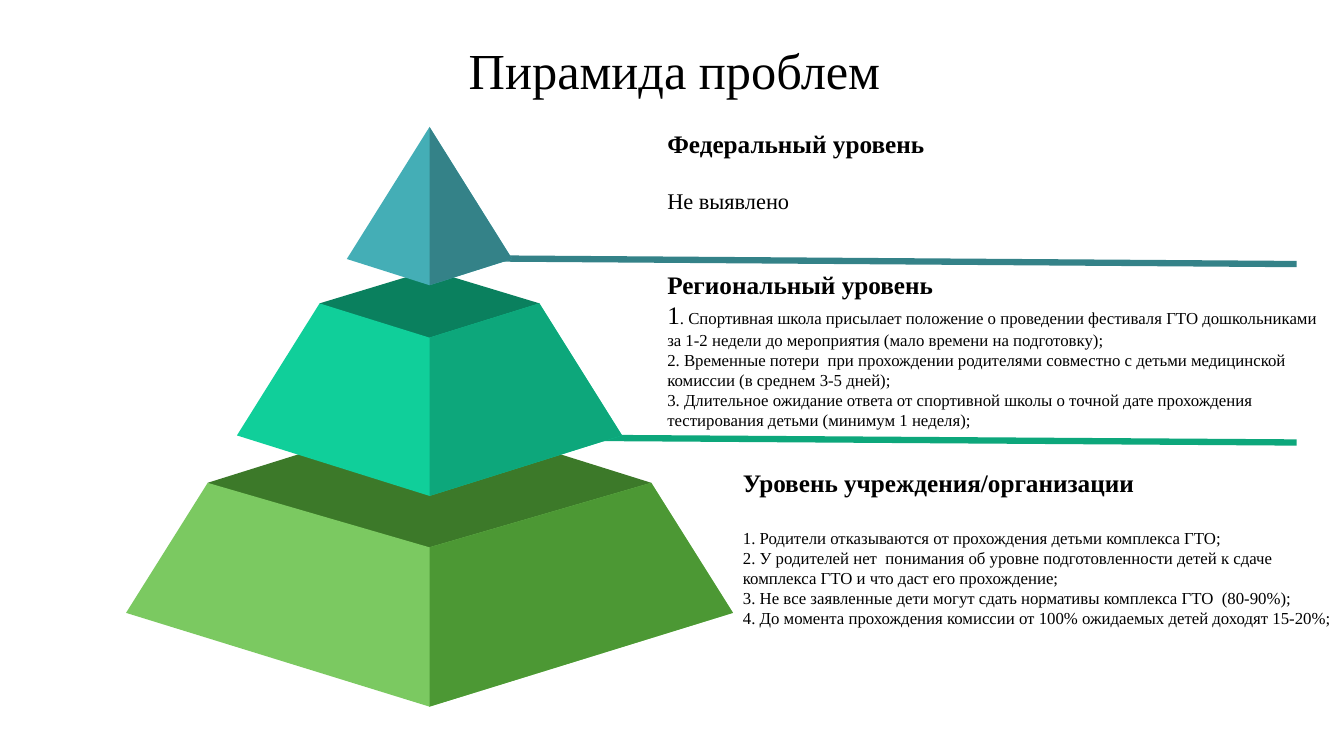
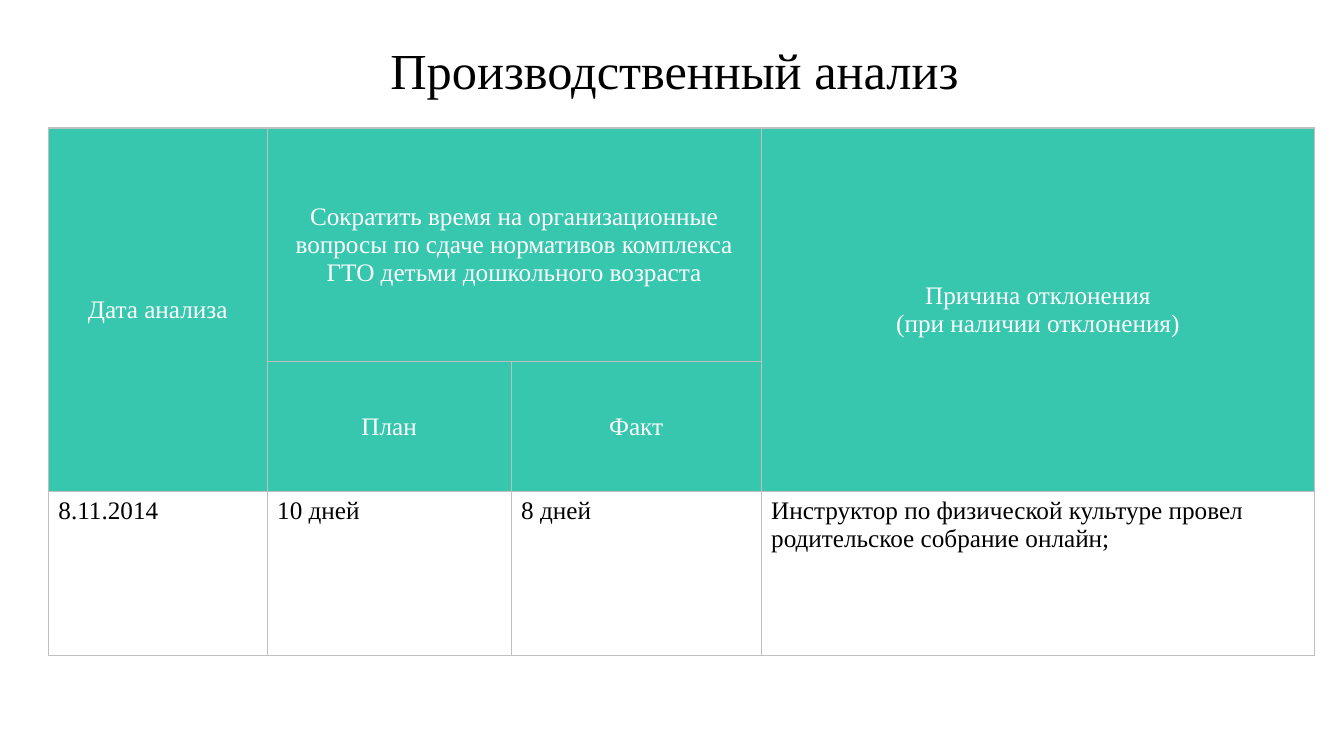
"""Build two slides: a pyramid of problem levels and a production analysis table."""

from dataclasses import dataclass
from typing import Any

from lxml import etree
from pptx import Presentation
from pptx.dml.color import RGBColor
from pptx.enum.shapes import MSO_CONNECTOR
from pptx.enum.text import MSO_ANCHOR, PP_ALIGN
from pptx.oxml.ns import qn
from pptx.slide import Slide
from pptx.text.text import TextFrame
from pptx.util import Pt

EMU_PER_PX = 9144
SLIDE_SIZE = (1333, 750)
TITLE_ONLY = 5
STRAIGHT = MSO_CONNECTOR.STRAIGHT
MIDDLE, TOP = MSO_ANCHOR.MIDDLE, MSO_ANCHOR.TOP
CENTER, LEFT = PP_ALIGN.CENTER, PP_ALIGN.LEFT

FONT = "Times New Roman"
BLACK, WHITE = "000000", "FFFFFF"
HEADER_FILL, GRID = "37C7AF", "BFBFBF"
TITLE_BOX = (34, 36, 1270, 73)
TITLE_SIZE, HEADING_SIZE, NOTE_SIZE, ITEM_SIZE = 36, 18, 16, 12
BLANK_LINE = 21
PYRAMID_AXIS = 426

Point = tuple[int, int]
Box = tuple[int, int, int, int]


@dataclass(frozen=True)
class Span:
    """A stretch of text in one size and weight."""

    text: str
    size: int = HEADING_SIZE
    bold: bool = False


@dataclass(frozen=True)
class Line:
    """A paragraph made of spans."""

    spans: tuple[Span, ...]
    align: PP_ALIGN = LEFT
    before: int = 0
    spacing: float = 1.0


@dataclass(frozen=True)
class Tier:
    """A pyramid tier given by half widths and heights around the axis."""

    lid_half: int
    lid_back: int
    lid_side: int
    lid_front: int
    base_half: int
    base_side: int
    base_front: int
    lid_color: str
    light: str
    dark: str


@dataclass(frozen=True)
class Divider:
    """A rule that leads from a tier to the right."""

    start: Point
    end: Point
    color: str


@dataclass(frozen=True)
class Level:
    """A described problem level beside the pyramid."""

    box: Box
    heading: str
    items: tuple[tuple[Span, ...], ...]
    gap: int = 0


@dataclass(frozen=True)
class Entry:
    """A table cell with its position and span."""

    row: int
    column: int
    lines: tuple[str, ...]
    rows: int = 1
    columns: int = 1


TIERS = (
    Tier(220, 410, 479, 543, 301, 608, 701, "3C7929", "7BC961", "4C9834"),
    Tier(109, 268, 301, 335, 191, 432, 492, "0A805E", "10CF9A", "0DA77B"),
    Tier(0, 126, 126, 126, 82, 257, 283, "348288", "44AEB6", "348288"),
)

DIVIDERS = (
    Divider((426, 256), (1286, 262), "348288"),
    Divider((370, 433), (1286, 439), "0DA77B"),
)


def items(*texts: str) -> tuple[tuple[Span, ...], ...]:
    """Turn plain texts into small list lines."""
    return tuple((Span(text, ITEM_SIZE),) for text in texts)


LEVELS = (
    Level((652, 122, 378, 98), "Федеральный уровень", ((Span("Не выявлено", NOTE_SIZE),),), BLANK_LINE),
    Level(
        (652, 262, 674, 172),
        "Региональный уровень",
        (
            (
                Span("1"),
                Span(
                    ". Спортивная школа присылает положение о проведении фестиваля ГТО дошкольниками "
                    "за 1-2 недели до мероприятия (мало времени на подготовку);",
                    ITEM_SIZE,
                ),
            ),
            *items(
                "2. Временные потери  при прохождении родителями совместно с детьми медицинской "
                "комиссии (в среднем 3-5 дней);",
                "3. Длительное ожидание ответа от спортивной школы о точной дате прохождения "
                "тестирования детьми (минимум 1 неделя);",
            ),
        ),
    ),
    Level(
        (727, 459, 606, 203),
        "Уровень учреждения/организации",
        items(
            "1. Родители отказываются от прохождения детьми комплекса ГТО;",
            "2. У родителей нет  понимания об уровне подготовленности детей к сдаче "
            "комплекса ГТО и что даст его прохождение;",
            "3. Не все заявленные дети могут сдать нормативы комплекса ГТО  (80-90%);",
            "4. До момента прохождения комиссии от 100% ожидаемых детей доходят 15-20%;",
        ),
        BLANK_LINE,
    ),
)

TABLE_ORIGIN = (48, 127)
COLUMN_WIDTHS = (217, 242, 248, 549)
ROW_HEIGHTS = (232, 129, 162)
HEADER_ROWS = 2
ENTRIES = (
    Entry(0, 0, ("Дата анализа",), rows=2),
    Entry(
        0,
        1,
        ("Сократить время на организационные вопросы по сдаче нормативов комплекса ГТО детьми дошкольного возраста",),
        columns=2,
    ),
    Entry(0, 3, ("Причина отклонения", "(при наличии отклонения)"), rows=2),
    Entry(1, 1, ("План",)),
    Entry(1, 2, ("Факт",)),
    Entry(2, 0, ("8.11.2014",)),
    Entry(2, 1, ("10 дней",)),
    Entry(2, 2, ("8 дней",)),
    Entry(2, 3, ("Инструктор по физической культуре провел родительское собрание онлайн;",)),
)


def emu(*lengths: int) -> list[int]:
    """Scale px lengths to EMU."""
    return [length * EMU_PER_PX for length in lengths]


def rgb(color: str) -> RGBColor:
    """Turn a hex string into a colour."""
    return RGBColor.from_string(color)


def apply(target: Any, values: dict[str, Any]) -> None:
    """Set attributes from a dict of format values."""
    for name, value in values.items():
        setattr(target, name, value)


def paint(fill: Any, color: str) -> None:
    """Fill with one solid colour."""
    fill.solid()
    fill.fore_color.rgb = rgb(color)


def write(frame: TextFrame, lines: list[Line], color: str = BLACK) -> None:
    """Write formatted lines into a text frame."""
    frame.word_wrap = True
    for index, line in enumerate(lines):
        paragraph = frame.add_paragraph() if index else frame.paragraphs[0]
        apply(
            paragraph,
            {"alignment": line.align, "space_before": Pt(line.before), "line_spacing": line.spacing},
        )
        for span in line.spans:
            run = paragraph.add_run()
            run.text = span.text
            apply(run.font, {"name": FONT, "size": Pt(span.size), "bold": span.bold})
            run.font.color.rgb = rgb(color)


def add_titled_slide(deck: Any, text: str) -> Slide:
    """Add a slide with the shared title style."""
    slide = deck.slides.add_slide(deck.slide_layouts[TITLE_ONLY])
    title = slide.shapes.title
    apply(title, dict(zip(("left", "top", "width", "height"), emu(*TITLE_BOX))))
    title.text_frame.vertical_anchor = MIDDLE
    write(title.text_frame, [Line((Span(text, TITLE_SIZE),), CENTER, spacing=0.9)])
    return slide


def draw_face(slide: Slide, points: list[Point], color: str) -> None:
    """Draw one flat face of the pyramid."""
    corners = list(dict.fromkeys(points))
    builder = slide.shapes.build_freeform(*corners[0], scale=EMU_PER_PX)
    builder.add_line_segments(corners[1:], close=True)
    face = builder.convert_to_shape()
    face.shadow.inherit = False
    paint(face.fill, color)
    face.line.fill.background()


def draw_tier(slide: Slide, tier: Tier) -> None:
    """Draw the lid, the lit front and the shaded right half of a tier."""
    axis = PYRAMID_AXIS
    lid_left, lid_right = ((axis + side * tier.lid_half, tier.lid_side) for side in (-1, 1))
    base_left, base_right = ((axis + side * tier.base_half, tier.base_side) for side in (-1, 1))
    lid_front, base_front = (axis, tier.lid_front), (axis, tier.base_front)
    if tier.lid_half:
        draw_face(slide, [(axis, tier.lid_back), lid_right, base_front, lid_left], tier.lid_color)
    draw_face(slide, [lid_right, base_right, base_front, base_left, lid_left, lid_front], tier.light)
    draw_face(slide, [lid_right, base_right, base_front, lid_front], tier.dark)


def draw_divider(slide: Slide, divider: Divider) -> None:
    """Draw a thick rule without shadow."""
    rule = slide.shapes.add_connector(STRAIGHT, *emu(*divider.start, *divider.end))
    rule.line.color.rgb = rgb(divider.color)
    rule.line.width = Pt(4.5)
    etree.SubElement(rule._element.spPr, qn("a:effectLst"))


def draw_level(slide: Slide, level: Level) -> None:
    """Write a level heading and its items."""
    frame = slide.shapes.add_textbox(*emu(*level.box)).text_frame
    heading = Line((Span(level.heading, bold=True),))
    details = [Line(spans, before=0 if index else level.gap) for index, spans in enumerate(level.items)]
    write(frame, [heading, *details])


def draw_borders(cell: Any) -> None:
    """Give a cell thin grey borders on all sides."""
    properties = cell._tc.get_or_add_tcPr()
    for index, side in enumerate(("a:lnL", "a:lnR", "a:lnT", "a:lnB")):
        border = etree.Element(qn(side), w=str(Pt(1)))
        fill = etree.SubElement(border, qn("a:solidFill"))
        etree.SubElement(fill, qn("a:srgbClr"), val=GRID)
        properties.insert(index, border)


def draw_analysis(slide: Slide) -> None:
    """Draw the analysis table with merged headers."""
    size = (sum(COLUMN_WIDTHS), sum(ROW_HEIGHTS))
    frame = slide.shapes.add_table(len(ROW_HEIGHTS), len(COLUMN_WIDTHS), *emu(*TABLE_ORIGIN, *size))
    table = frame.table
    apply(table, {"first_row": False, "horz_banding": False})
    for column, width in zip(table.columns, emu(*COLUMN_WIDTHS)):
        column.width = width
    for index, (row, height) in enumerate(zip(table.rows, emu(*ROW_HEIGHTS))):
        row.height = height
        for cell in row.cells:
            paint(cell.fill, HEADER_FILL if index < HEADER_ROWS else WHITE)
            draw_borders(cell)
    for entry in ENTRIES:
        cell = table.cell(entry.row, entry.column)
        if entry.rows * entry.columns > 1:
            cell.merge(table.cell(entry.row + entry.rows - 1, entry.column + entry.columns - 1))
        is_header = entry.row < HEADER_ROWS
        cell.vertical_anchor = MIDDLE if is_header else TOP
        lines = [Line((Span(text),), CENTER if is_header else LEFT) for text in entry.lines]
        write(cell.text_frame, lines, WHITE if is_header else BLACK)


def main() -> None:
    """Build and save the presentation."""
    deck = Presentation()
    apply(deck, dict(zip(("slide_width", "slide_height"), emu(*SLIDE_SIZE))))
    pyramid = add_titled_slide(deck, "Пирамида проблем")
    for draw, parts in ((draw_divider, DIVIDERS), (draw_tier, TIERS), (draw_level, LEVELS)):
        for part in parts:
            draw(pyramid, part)
    draw_analysis(add_titled_slide(deck, "Производственный анализ"))
    deck.save("out.pptx")


if __name__ == "__main__":
    main()
